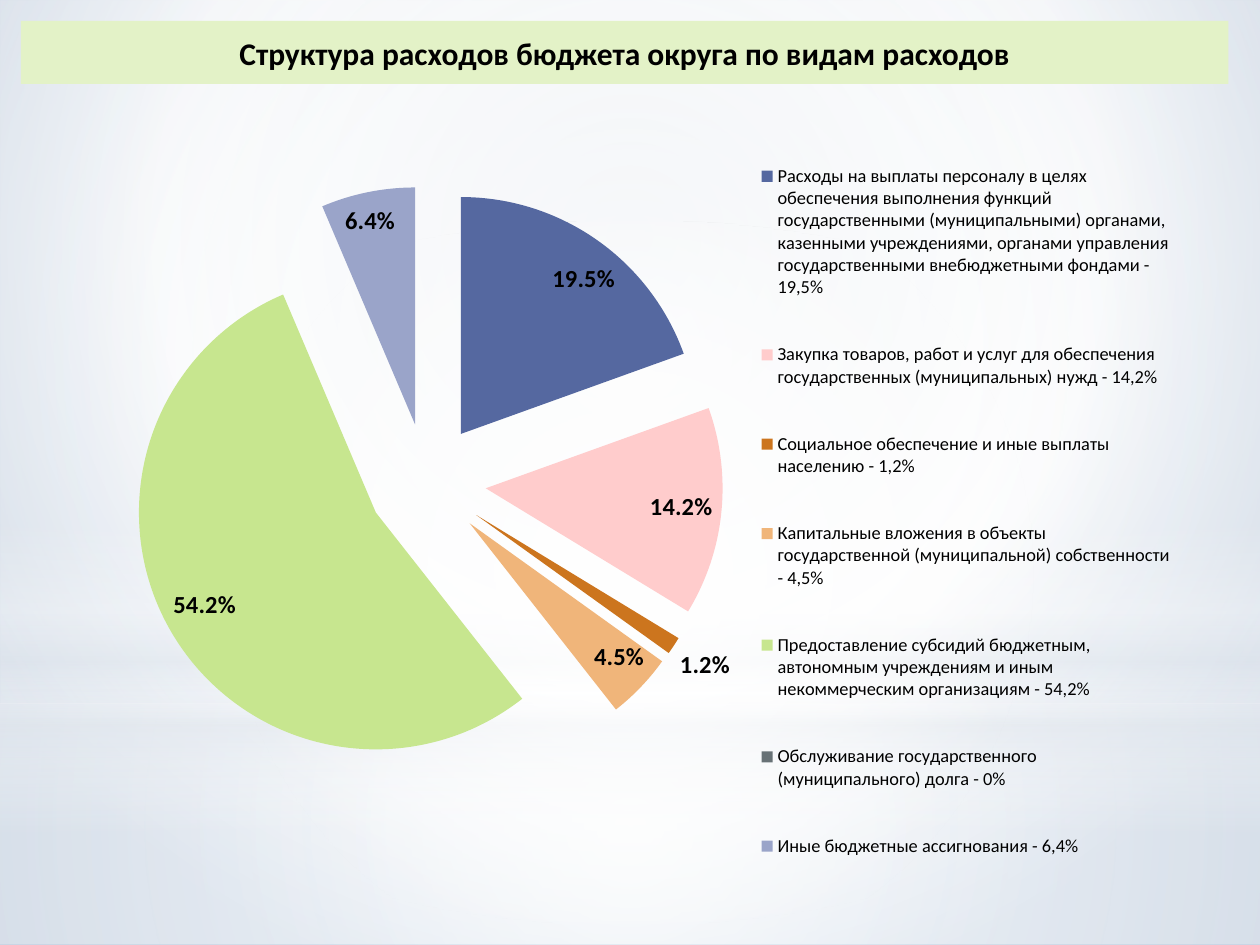
from dataclasses import dataclass

from lxml import etree
from pptx import Presentation
from pptx.chart.data import CategoryChartData
from pptx.dml.color import RGBColor
from pptx.enum.chart import XL_CHART_TYPE, XL_LABEL_POSITION, XL_LEGEND_POSITION
from pptx.enum.shapes import MSO_SHAPE
from pptx.enum.text import MSO_ANCHOR, MSO_AUTO_SIZE, PP_ALIGN
from pptx.oxml import parse_xml
from pptx.oxml.ns import qn
from pptx.util import Pt

PIE = XL_CHART_TYPE.PIE
BEST = XL_LABEL_POSITION.BEST_FIT
RIGHT = XL_LEGEND_POSITION.RIGHT
RECT = MSO_SHAPE.RECTANGLE
OVAL = MSO_SHAPE.OVAL
MIDDLE = MSO_ANCHOR.MIDDLE
CENTER = PP_ALIGN.CENTER
FIXED = MSO_AUTO_SIZE.NONE
NS = "http://schemas.openxmlformats.org/drawingml/2006/main"


@dataclass(frozen=True)
class Theme:
    font: str = "Calibri"
    base: str = "Karla"
    ink: str = "000000"
    bar: str = "E3F2C7"
    white: str = "FFFFFF"
    mist: str = "E4E9EF"
    pale: str = "D7DFE8"
    blue: str = "A3B9D4"
    head: float = 18
    label: float = 14
    key: float = 10.5
    small: float = 10


T = Theme()
TITLE = "Структура расходов бюджета округа по видам расходов"
ITEMS = [
    ("Расходы на выплаты персоналу в целях обеспечения выполнения функций "
     "государственными (муниципальными) органами, казенными учреждениями, органами "
     "управления государственными внебюджетными фондами - 19,5%", 19.5, "5568A0"),
    ("Закупка товаров, работ и услуг для обеспечения государственных "
     "(муниципальных) нужд - 14,2%", 14.2, "FFCCCC"),
    ("Социальное обеспечение и иные выплаты населению - 1,2%", 1.2, "CC751E"),
    ("Капитальные вложения в объекты государственной (муниципальной) "
     "собственности - 4,5%", 4.5, "F0B57A"),
    ("Предоставление субсидий бюджетным, автономным учреждениям и иным "
     "некоммерческим организациям - 54,2%", 54.2, "C7E68F"),
    ("Обслуживание государственного (муниципального) долга - 0%", 0, "687276"),
    ("Иные бюджетные ассигнования - 6,4%", 6.4, "9AA4C9"),
]


def rgb(code):
    return RGBColor.from_string(code)


def style(font, name, size, bold=False):
    font.name, font.size, font.bold = name, Pt(size), bold
    font.color.rgb = rgb(T.ink)


def blend(root, stops, focus=None):
    marks = "".join(
        f'<a:gs pos="{pos * 1000}"><a:srgbClr val="{code}">'
        f'<a:alpha val="{alpha * 1000}"/></a:srgbClr></a:gs>'
        for pos, code, alpha in stops)
    if focus:
        edges = " ".join(f'{side}="{val * 1000}"' for side, val in zip("ltrb", focus))
        way = f'<a:path path="circle"><a:fillToRect {edges}/></a:path>'
    else:
        way = '<a:lin ang="5400000" scaled="0"/>'
    grad = parse_xml(f'<a:gradFill xmlns:a="{NS}" rotWithShape="1">'
                     f'<a:gsLst>{marks}</a:gsLst>{way}</a:gradFill>')
    old = next(root.iter(qn("a:noFill")))
    old.getparent().replace(old, grad)


def glow(slide, kind, box, stops, focus=None):
    shape = slide.shapes.add_shape(kind, *map(Pt, box))
    shape.shadow.inherit = False
    shape.fill.background()
    blend(shape.element, stops, focus)
    shape.line.fill.background()


def scene(slide, box):
    x, y, w, h = box
    mid = (50, 50, 50, 50)
    slide.background.fill.background()
    blend(slide.element, [(0, T.pale, 100), (60, T.white, 100), (100, T.blue, 100)],
          (20, 10, 20, 60))
    split = 402
    glow(slide, RECT, (x, y + split, w, h - split),
         [(0, T.white, 91), (37, T.white, 76), (100, T.mist, 79)], mid)
    glow(slide, RECT, (x, y, w, split),
         [(0, T.white, 89), (48, T.white, 62), (100, T.mist, 79)], mid)
    glow(slide, RECT, (x, y + 297, w, 180),
         [(0, T.white, 0), (29, T.white, 30), (45, T.mist, 40),
          (55, T.white, 26), (65, T.mist, 60), (100, T.white, 0)])
    glow(slide, OVAL, (x, y + 126, w, split),
         [(0, T.white, 100), (56, T.white, 0)], mid)


def banner(slide, box):
    bar = slide.shapes.title
    bar.left, bar.top, bar.width, bar.height = map(Pt, box)
    bar.element.spPr.append(parse_xml(
        f'<a:prstGeom xmlns:a="{NS}" prst="roundRect"><a:avLst/></a:prstGeom>'))
    bar.fill.solid()
    bar.fill.fore_color.rgb = rgb(T.bar)
    frame = bar.text_frame
    frame.text = TITLE
    frame.auto_size = FIXED
    frame.vertical_anchor = MIDDLE
    frame.paragraphs[0].alignment = CENTER
    style(frame.paragraphs[0].runs[0].font, T.font, T.head, True)
    slide.shapes.element.append(bar.element)


def layout(root, area, inner=False):
    for old in root.findall(qn("c:layout")):
        root.remove(old)
    node = etree.Element(qn("c:layout"))
    hand = etree.SubElement(node, qn("c:manualLayout"))
    parts = [("layoutTarget", "inner")] if inner else []
    parts += [("xMode", "edge"), ("yMode", "edge"), *zip("xywh", area)]
    for tag, val in parts:
        etree.SubElement(hand, qn(f"c:{tag}")).set("val", str(val))
    root.insert(0 if inner else 1, node)


def budget(slide, box):
    data = CategoryChartData()
    data.categories = [name for name, _, _ in ITEMS]
    data.add_series("Series 1", [val for _, val, _ in ITEMS])
    chart = slide.shapes.add_chart(PIE, *map(Pt, box), data).chart
    chart.has_title = False
    style(chart.font, T.base, T.small)
    chart.has_legend = True
    key = chart.legend
    key.position = RIGHT
    key.include_in_layout = False
    style(key.font, T.font, T.key)
    layout(key._element, (0.6, 0.11, 0.39, 0.88))
    plot = chart.plots[0]
    plot.vary_by_categories = True
    layout(plot._element.getparent(), (0.015, 0.184, 0.553, 0.667), True)
    series = plot.series[0]
    for i, (_, _, code) in enumerate(ITEMS):
        fill = series.points[i].format.fill
        fill.solid()
        fill.fore_color.rgb = rgb(code)
    burst = etree.Element(qn("c:explosion"), val="25")
    series._element.find(qn("c:dPt")).addprevious(burst)
    tags = series.data_labels
    tags.show_percentage = True
    tags.show_value = False
    tags.number_format = "0.0%"
    tags.number_format_is_linked = False
    tags.position = BEST
    style(tags.font, T.font, T.label, True)


def main():
    deck = Presentation()
    deck.slide_width, deck.slide_height = Pt(720), Pt(540)
    slide = deck.slides.add_slide(deck.slide_layouts[5])
    scene(slide, (0, 0, 720, 540))
    banner(slide, (12, 12, 690, 36))
    budget(slide, (65.5, 13, 612, 507.6))
    deck.save("out.pptx")


if __name__ == "__main__":
    main()
